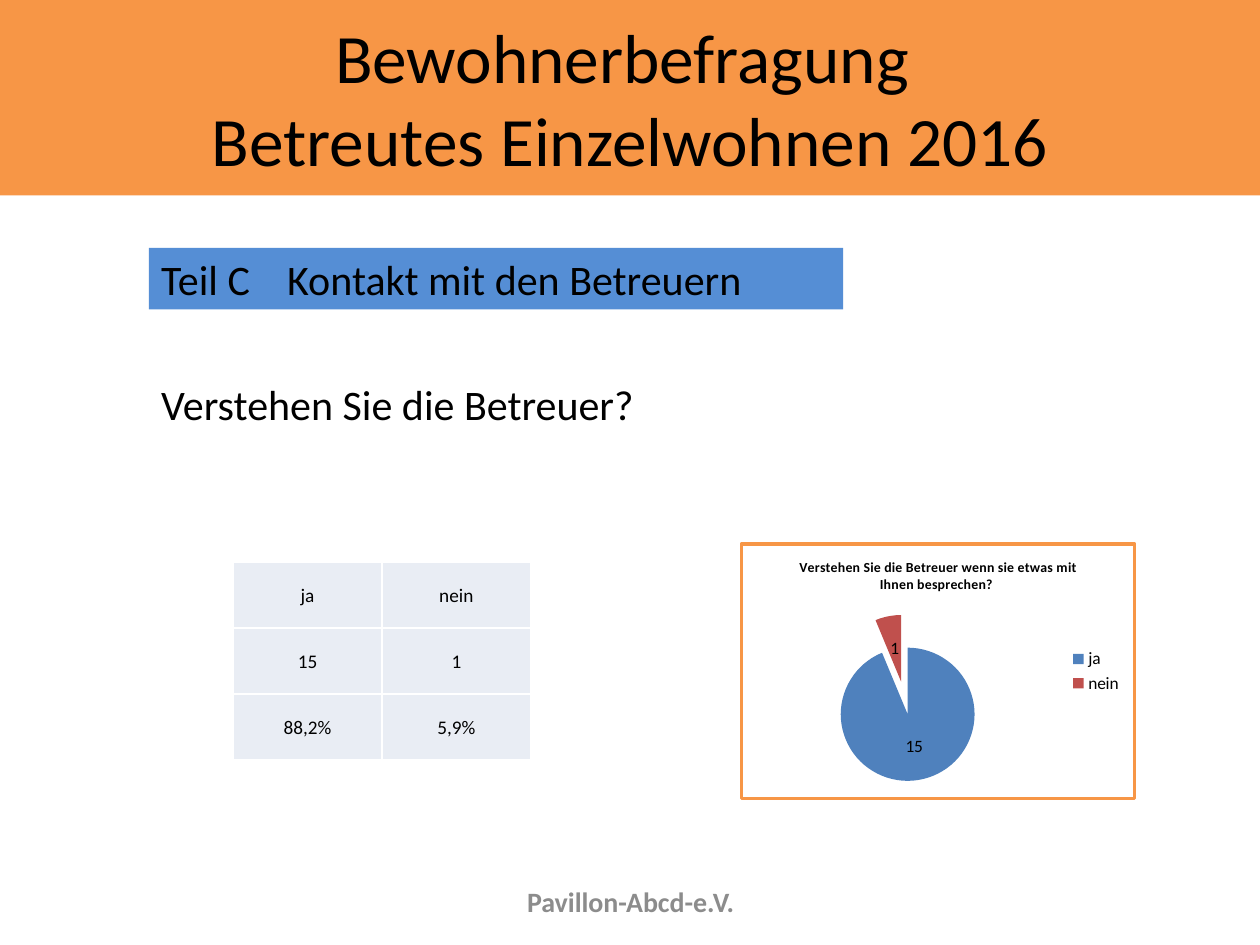
from lxml import etree
from pptx import Presentation
from pptx.chart import data as chartdata
from pptx.dml.color import RGBColor
from pptx.enum import chart as charts, shapes, text
from pptx.oxml import parse_xml
from pptx.oxml.ns import nsdecls, qn
from pptx.util import Cm, Pt

COLOURS = {
    "orange": "F79646",
    "banner": "558ED5",
    "blue": "4F81BD",
    "red": "C0504D",
    "cell": "E9EDF4",
    "grey": "8C8C8C",
    "black": "000000",
    "white": "FFFFFF",
}
FONT = "Calibri"


def colour(name):
    return RGBColor.from_string(COLOURS[name])


def style_font(font, size, bold=False, ink="black"):
    font.name = FONT
    font.size = Pt(size)
    font.bold = bold
    font.color.rgb = colour(ink)


def write(frame, content, *, size, bold=False, ink="black", align="LEFT"):
    para = frame.paragraphs[0]
    para.text = content
    para.alignment = getattr(text.PP_ALIGN, align)
    for span in para.runs:
        style_font(span.font, size, bold, ink)


def line_xml(tag, ink, points):
    return (
        f'<{tag} w="{Pt(points)}"><a:solidFill>'
        f'<a:srgbClr val="{COLOURS[ink]}"/></a:solidFill></{tag}>'
    )


class SlideBuilder:
    def __init__(self, page):
        self.page = page

    def band(self, place, content, fill, **style):
        box = self.page.shapes.add_shape(
            shapes.MSO_SHAPE.RECTANGLE, *map(Cm, place)
        )
        box.shadow.inherit = False
        box.fill.solid()
        box.fill.fore_color.rgb = colour(fill)
        box.line.fill.background()
        box.text_frame.word_wrap = True
        box.text_frame.vertical_anchor = text.MSO_ANCHOR.MIDDLE
        write(box.text_frame, content, **style)

    def label(self, place, content, wrap=True, anchor="MIDDLE", **style):
        box = self.page.shapes.add_textbox(*map(Cm, place))
        box.text_frame.word_wrap = wrap
        box.text_frame.vertical_anchor = getattr(text.MSO_ANCHOR, anchor)
        write(box.text_frame, content, **style)

    def table(self, place, rows):
        table = self.page.shapes.add_table(
            len(rows), len(rows[0]), *map(Cm, place)
        ).table
        table.first_row = table.horz_banding = False
        for row, values in enumerate(rows):
            for column, value in enumerate(values):
                cell = table.cell(row, column)
                cell.fill.solid()
                cell.fill.fore_color.rgb = colour("cell")
                cell.vertical_anchor = text.MSO_ANCHOR.MIDDLE
                cell.margin_left = cell.margin_right = cell.margin_top = Cm(0.03)
                cell.margin_bottom = 0
                write(cell.text_frame, value, size=11, align="CENTER")
                properties = cell._tc.get_or_add_tcPr()
                for index, side in enumerate("LRTB"):
                    border = line_xml(f"a:ln{side}", "white", 1)
                    border = border.replace(" w=", f" {nsdecls('a')} w=", 1)
                    properties.insert(index, parse_xml(border))

    def pie(self, place, title, values, inks):
        data = chartdata.CategoryChartData()
        data.categories = list(values)
        data.add_series("Series 1", list(values.values()))
        chart = self.page.shapes.add_chart(
            charts.XL_CHART_TYPE.PIE, *map(Cm, place), data
        ).chart
        style_font(chart.font, 10)
        chart.has_title = True
        write(chart.chart_title.text_frame, title, size=8, bold=True, align="CENTER")
        chart.chart_title.include_in_layout = False
        chart.has_legend = True
        chart.legend.position = charts.XL_LEGEND_POSITION.RIGHT
        chart.legend.include_in_layout = False

        series = chart.plots[0].series[0]
        for index, ink in enumerate(inks):
            fill = series.points[index].format.fill
            fill.solid()
            fill.fore_color.rgb = colour(ink)
        explosion = etree.Element(qn("c:explosion"), val="25")
        series._element.find(qn("c:dPt")).addprevious(explosion)

        labels = series.data_labels
        labels.show_value = True
        labels.number_format = "#,##0"
        labels.number_format_is_linked = False
        labels.position = charts.XL_LABEL_POSITION.CENTER

        frame = parse_xml(
            f'<c:spPr {nsdecls("c", "a")}><a:solidFill>'
            f'<a:srgbClr val="{COLOURS["white"]}"/></a:solidFill>'
            f'{line_xml("a:ln", "orange", 2)}</c:spPr>'
        )
        chart._chartSpace.find(qn("c:chart")).addnext(frame)


def main():
    deck = Presentation()
    deck.slide_width, deck.slide_height = Cm(25.4), Cm(19.05)
    builder = SlideBuilder(deck.slides.add_slide(deck.slide_layouts[6]))

    builder.band(
        (0, 0, 25.4, 3.94),
        "Bewohnerbefragung \vBetreutes Einzelwohnen 2016",
        "orange", size=39.6, align="CENTER",
    )
    builder.band(
        (3, 5, 14, 1.24), "Teil C\tKontakt mit den Betreuern", "banner", size=24
    )
    builder.label(
        (8.69, 17.65, 8.05, 1.02), "Pavillon-Abcd-e.V.",
        size=16, bold=True, ink="grey", align="CENTER",
    )
    builder.label(
        (3, 7.5, 10.1, 1.27), "Verstehen Sie die Betreuer?",
        wrap=False, anchor="TOP", size=24,
    )
    builder.pie(
        (14.91, 10.93, 8, 5.2),
        "Verstehen Sie die Betreuer wenn sie etwas mit Ihnen besprechen? ",
        {"ja": 15, "nein": 1}, ("blue", "red"),
    )
    builder.table(
        (4.7, 11.33, 6, 3.99), [("ja", "nein"), ("15", "1"), ("88,2%", "5,9%")]
    )
    deck.save("out.pptx")


if __name__ == "__main__":
    main()
